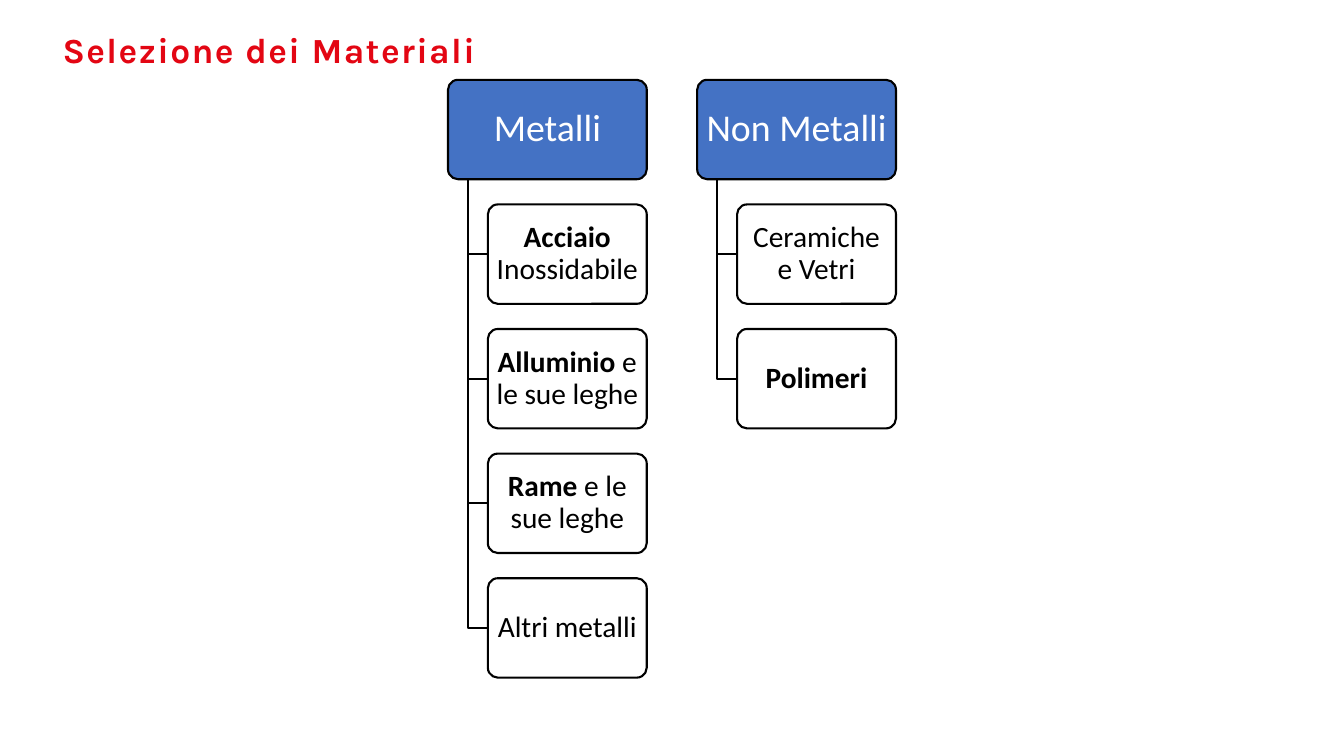
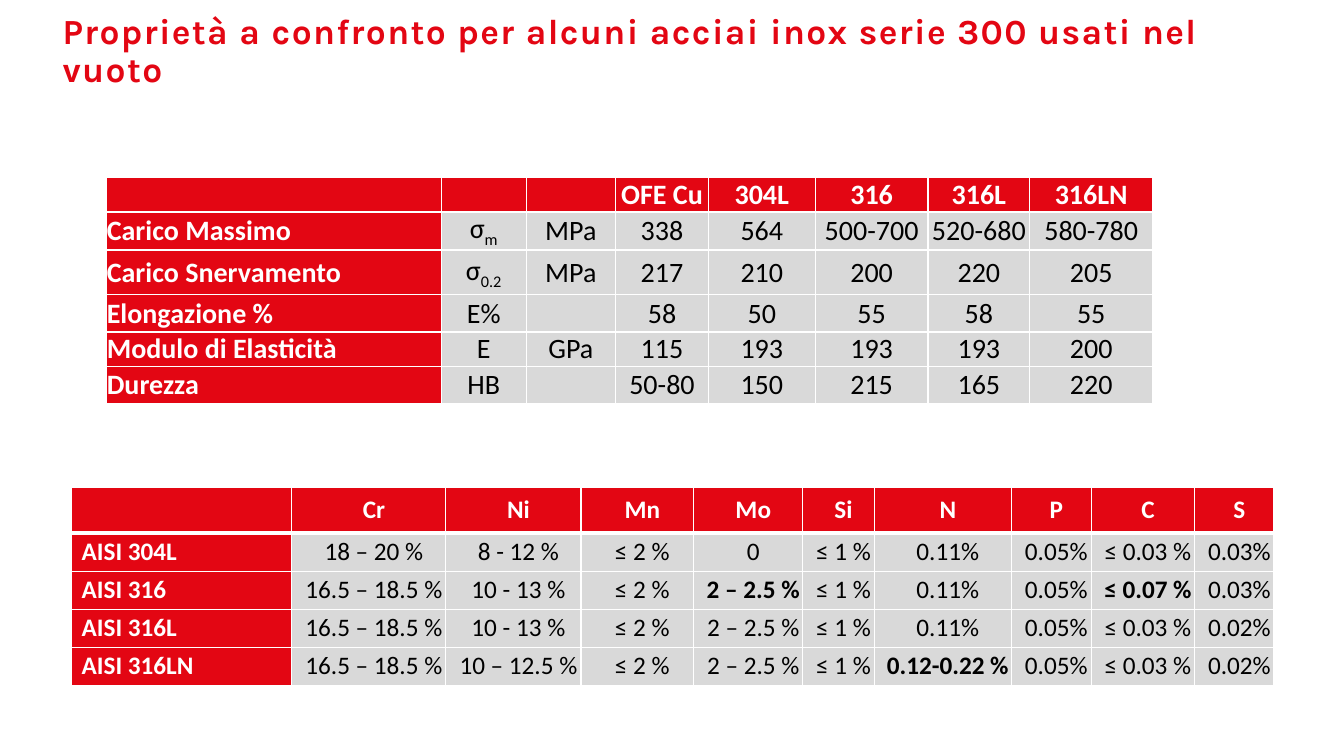
from lxml.etree import SubElement
from pptx import Presentation
from pptx.dml.color import RGBColor
from pptx.enum.shapes import MSO_SHAPE
from pptx.enum.text import MSO_ANCHOR, MSO_AUTO_SIZE, PP_ALIGN
from pptx.oxml.ns import qn
from pptx.util import Pt

COLORS = {
    "red": "E30613",
    "blue": "4472C4",
    "gray": "D9D9D9",
    "white": "FFFFFF",
    "black": "000000",
}
RGB = {name: RGBColor.from_string(value) for name, value in COLORS.items()}
TITLE_FONT = "Karla"
BODY_FONT = "Calibri"

presentation = Presentation()
presentation.slide_width = Pt(960)
presentation.slide_height = Pt(540)


def add_titled_slide(text):
    slide = presentation.slides.add_slide(presentation.slide_layouts[5])
    title = slide.shapes.title
    title.left, title.top, title.width, title.height = Pt(37.5), Pt(21), Pt(828), Pt(33)
    frame = title.text_frame
    frame.text = text
    frame.word_wrap = True
    frame.auto_size = MSO_AUTO_SIZE.NONE
    frame.vertical_anchor = MSO_ANCHOR.MIDDLE
    paragraph = frame.paragraphs[0]
    paragraph.alignment = PP_ALIGN.LEFT
    paragraph.line_spacing = 0.9
    run = paragraph.runs[0]
    run.font.name = TITLE_FONT
    run.font.size = Pt(25.2)
    run.font.bold = True
    run.font.color.rgb = RGB["red"]
    run.font._element.set("spc", "100")
    return slide


def add_property_table(slide, left, top, widths, heights, rows, size, inset, header_rule):
    frame = slide.shapes.add_table(
        len(rows), len(widths), Pt(left), Pt(top), Pt(sum(widths)), Pt(sum(heights)))
    table = frame.table
    table.first_row = False
    table.horz_banding = False
    for column, width in zip(table.columns, widths):
        column.width = Pt(width)
    for row, height in zip(table.rows, heights):
        row.height = Pt(height)
    for row_index, values in enumerate(rows):
        for column_index, value in enumerate(values):
            is_heading = row_index == 0 or column_index == 0
            cell = table.cell(row_index, column_index)
            cell.margin_left = Pt(inset)
            cell.margin_right = cell.margin_top = cell.margin_bottom = 0
            cell.vertical_anchor = MSO_ANCHOR.MIDDLE

            rules = {"lnL": 1, "lnR": 1, "lnT": 1, "lnB": 1}
            if row_index == 0:
                rules["lnB"] = header_rule
            elif row_index == 1:
                rules["lnT"] = header_rule
            properties = cell._tc.get_or_add_tcPr()
            for tag, width in rules.items():
                line = SubElement(properties, qn("a:" + tag), w=str(Pt(width)))
                fill = SubElement(line, qn("a:solidFill"))
                SubElement(fill, qn("a:srgbClr"), val=COLORS["white"])
            cell.fill.solid()
            cell.fill.fore_color.rgb = RGB["red" if is_heading else "gray"]

            paragraph = cell.text_frame.paragraphs[0]
            paragraph.alignment = PP_ALIGN.LEFT if column_index == 0 else PP_ALIGN.CENTER
            paragraph.font.size = Pt(size)
            if not value:
                continue
            base, _, subscript = value.lstrip("*").partition("_")
            for text in filter(None, (base, subscript)):
                run = paragraph.add_run()
                run.text = text
                run.font.name = BODY_FONT
                run.font.size = Pt(size)
                run.font.bold = is_heading or value.startswith("*")
                run.font.color.rgb = RGB["white" if is_heading else "black"]
            if subscript:
                run.font._element.set("baseline", "-25000")


slide = add_titled_slide("Selezione dei Materiali")

FAMILIES = [
    ("Metalli", [
        ("Acciaio", " Inossidabile"),
        ("Alluminio", " e le sue leghe"),
        ("Rame", " e le sue leghe"),
        ("", "Altri metalli"),
    ]),
    ("Non Metalli", [
        ("", "Ceramiche e Vetri"),
        ("Polimeri", ""),
    ]),
]
CHART_LEFT, CHART_TOP = 320, 57
COLUMN_PITCH, ROW_PITCH = 178, 89
HEAD_WIDTH, BOX_HEIGHT = 142, 71
STEM, INDENT = 14.25, 28.5

for family_index, (family, materials) in enumerate(FAMILIES):
    left = CHART_LEFT + family_index * COLUMN_PITCH
    boxes = [(("", family), 0, 27, "blue", "white", 3)]
    boxes += [(material, INDENT, 21, "white", "black", 2) for material in materials]
    for box_index, (parts, indent, size, fill, ink, inset) in enumerate(boxes):
        top = CHART_TOP + box_index * ROW_PITCH
        if box_index:
            middle = top + BOX_HEIGHT / 2
            builder = slide.shapes.build_freeform(
                Pt(left + STEM), Pt(CHART_TOP + BOX_HEIGHT))
            builder.add_line_segments(
                [(Pt(left + STEM), Pt(middle)), (Pt(left + indent), Pt(middle))], close=False)
            branch = builder.convert_to_shape()
            branch.shadow.inherit = False
            branch.fill.background()
            branch.line.color.rgb = RGB["black"]
            branch.line.width = Pt(1.5)
        box = slide.shapes.add_shape(
            MSO_SHAPE.ROUNDED_RECTANGLE, Pt(left + indent), Pt(top),
            Pt(HEAD_WIDTH - indent), Pt(BOX_HEIGHT))
        box.adjustments[0] = 0.1
        box.shadow.inherit = False
        box.fill.solid()
        box.fill.fore_color.rgb = RGB[fill]
        box.line.color.rgb = RGB["black"]
        box.line.width = Pt(1.5)
        frame = box.text_frame
        frame.word_wrap = True
        frame.vertical_anchor = MSO_ANCHOR.MIDDLE
        frame.margin_left = frame.margin_right = Pt(inset)
        frame.margin_top = frame.margin_bottom = Pt(2)
        paragraph = frame.paragraphs[0]
        paragraph.alignment = PP_ALIGN.CENTER
        paragraph.line_spacing = 0.9
        for text, bold in zip(parts, (True, False)):
            if text:
                run = paragraph.add_run()
                run.text = text
                run.font.name = BODY_FONT
                run.font.size = Pt(size)
                run.font.bold = bold
                run.font.color.rgb = RGB[ink]

slide = add_titled_slide(
    "Proprietà a confronto per alcuni acciai inox serie 300 usati nel vuoto")

MECHANICAL = [
    ["", "", "", "OFE Cu", "304L", "316", "316L", "316LN"],
    ["Carico Massimo", "σ_m", "MPa", "338", "564", "500-700", "520-680", "580-780"],
    ["Carico Snervamento", "σ_0.2", "MPa", "217", "210", "200", "220", "205"],
    ["Elongazione %", "E%", "", "58", "50", "55", "58", "55"],
    ["Modulo di Elasticità", "E", "GPa", "115", "193", "193", "193", "200"],
    ["Durezza", "HB", "", "50-80", "150", "215", "165", "220"],
]
add_property_table(
    slide, 76.3, 126.9, [239, 60.5, 64, 66.3, 76.3, 80.6, 72.7, 87.8],
    [24.5, 27, 32, 26.6, 24, 26.6], MECHANICAL, size=20, inset=0, header_rule=1)

COMPOSITION = [
    ["", "Cr", "Ni", "Mn", "Mo", "Si", "N", "P", "C", "S"],
    ["AISI 304L", "18 – 20 %", "8 - 12 %", "≤ 2 %", "0", "≤ 1 %",
     "0.11%", "0.05%", "≤ 0.03 %", "0.03%"],
    ["AISI 316", "16.5 – 18.5 %", "10 - 13 %", "≤ 2 %", "*2 – 2.5 %", "≤ 1 %",
     "0.11%", "0.05%", "*≤ 0.07 %", "0.03%"],
    ["AISI 316L", "16.5 – 18.5 %", "10 - 13 %", "≤ 2 %", "2 – 2.5 %", "≤ 1 %",
     "0.11%", "0.05%", "≤ 0.03 %", "0.02%"],
    ["AISI 316LN", "16.5 – 18.5 %", "10 – 12.5 %", "≤ 2 %", "2 – 2.5 %", "≤ 1 %",
     "*0.12-0.22 %", "0.05%", "≤ 0.03 %", "0.02%"],
]
add_property_table(
    slide, 51.1, 347.8, [157.4, 110, 96.5, 80.5, 78, 51, 98, 57, 74, 56.6],
    [33] + [27.2] * 4, COMPOSITION, size=18, inset=7.2, header_rule=3)

presentation.save("out.pptx")
